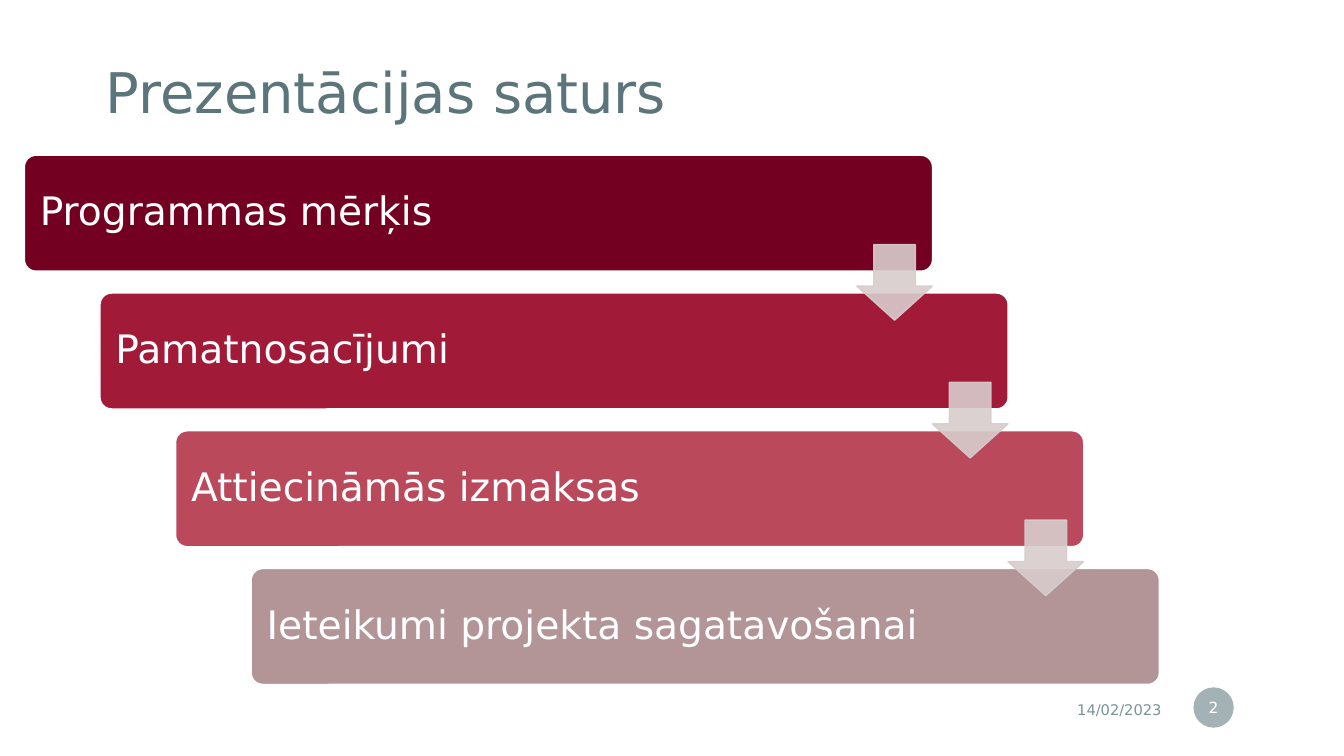
"""Build the contents slide with four stepped bars joined by arrows."""
import pptx
import pptx.util
import pptx.dml.color
import pptx.enum.shapes
import pptx.enum.text
import pptx.oxml
import pptx.oxml.ns

Pt = pptx.util.Pt
Kind = pptx.enum.shapes.MSO_SHAPE
Align = pptx.enum.text.PP_ALIGN
HUES = {
    "title": "5B757A", "date": "7C9396", "white": "FFFFFF", "arrow": "D8CCCD",
    "wine": "740021", "red": "A11A38", "rose": "B9495B", "dusk": "B39598",
}
BARS = [
    ("Programmas mērķis", "wine"),
    ("Pamatnosacījumi", "red"),
    ("Attiecināmās izmaksas", "rose"),
    ("Ieteikumi projekta sagatavošanai", "dusk"),
]


def write(shape, text, size, hue, align, pad, space=1.0):
    frame = shape.text_frame
    frame.word_wrap = True
    frame.vertical_anchor = pptx.enum.text.MSO_ANCHOR.MIDDLE
    frame.margin_left = frame.margin_right = Pt(pad[0])
    frame.margin_top = frame.margin_bottom = Pt(pad[1])
    para = frame.paragraphs[0]
    para.alignment = align
    para.line_spacing = space
    run = para.add_run()
    run.text = text
    run.font.size = Pt(size)
    run.font.name = "DejaVu Sans"
    run.font.color.rgb = pptx.dml.color.RGBColor.from_string(HUES[hue])


def draw(kind, box, hue, edge=None, alpha=100):
    shape = slide.shapes.add_shape(kind, *map(Pt, box))
    shape.shadow.inherit = False
    shape.fill.solid()
    shape.fill.fore_color.rgb = pptx.dml.color.RGBColor.from_string(HUES[hue])
    if edge:
        shape.line.color.rgb = pptx.dml.color.RGBColor.from_string(HUES[edge])
        shape.line.width = Pt(1)
    else:
        shape.line.fill.background()
    if alpha < 100:
        for tint in shape.element.spPr.iter(pptx.oxml.ns.qn("a:srgbClr")):
            fade = pptx.oxml.parse_xml(
                f'<a:alpha {pptx.oxml.ns.nsdecls("a")} val="{alpha * 1000}"/>')
            tint.append(fade)
    return shape


deck = pptx.Presentation()
deck.slide_width, deck.slide_height = Pt(960), Pt(540)
slide = deck.slides.add_slide(deck.slide_layouts[6])

title = slide.shapes.add_textbox(Pt(61.2), Pt(25.2), Pt(604), Pt(85.7))
write(title, "Prezentācijas saturs", 40, "title", Align.LEFT, (14.4, 14.4), 0.9)

date = slide.shapes.add_textbox(Pt(620), Pt(494), Pt(216.7), Pt(25.2))
write(date, "14/02/2023", 10.5, "date", Align.RIGHT, (7.2, 3.6))

badge = draw(Kind.OVAL, (852.5, 491, 28.8, 28.8), "date", alpha=70)
write(badge, "2", 11, "white", Align.CENTER, (1.44, 3.6))

step, drop = 54, 98.4
for i, (text, hue) in enumerate(BARS):
    box = (17.4 + i * step, 110.9 + i * drop, 648.7, 82.8)
    bar = draw(Kind.ROUNDED_RECTANGLE, box, hue, "white")
    bar.adjustments[0] = 0.1
    write(bar, text, 28, "white", Align.LEFT, (8.64, 8.64), 0.9)

for i in range(len(BARS) - 1):
    box = (612 + i * step, 174.7 + i * drop, 54, 54)
    arrow = draw(Kind.DOWN_ARROW, box, "arrow", "arrow", 90)
    arrow.adjustments[0] = 0.55
    arrow.adjustments[1] = 0.45

deck.save("out.pptx")
